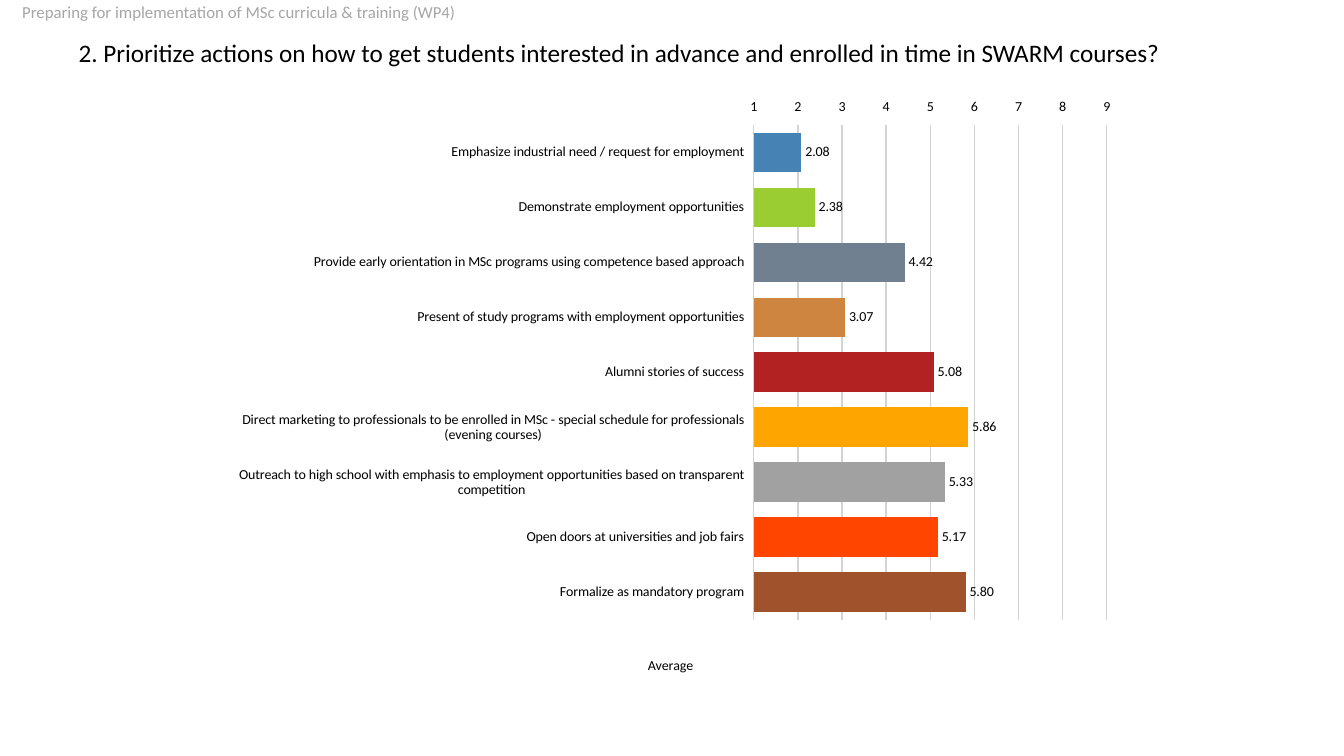
"""Build the slide that ranks actions for attracting students to the courses."""
from dataclasses import dataclass
from typing import Any

import lxml.etree
import pptx
import pptx.chart.data
import pptx.dml.color
import pptx.enum.chart
import pptx.enum.text
import pptx.oxml.ns
import pptx.util

Cm = pptx.util.Cm
Pt = pptx.util.Pt
qn = pptx.oxml.ns.qn


@dataclass(frozen=True)
class Theme:
    font: str = "Calibri"
    ink: str = "000000"
    muted: str = "A6A6A6"
    grid: str = "D3D3D3"
    question_size: int = 18
    section_size: int = 12
    chart_size: int = 10


@dataclass(frozen=True)
class Heading:
    text: str
    left: float
    top: float
    width: float
    height: float
    size: int
    colour: str
    inset: float


@dataclass(frozen=True)
class Action:
    label: str
    average: float
    colour: str


THEME = Theme()

HEADINGS = (
    Heading(
        "2. Prioritize actions on how to get students interested in advance and enrolled in time in SWARM courses?",
        1.73, 0.61, 30.48, 1.52, THEME.question_size, THEME.ink, 0.25,
    ),
    Heading(
        "Preparing for implementation of MSc curricula & training (WP4)",
        0, 0, 33.87, 0.64, THEME.section_size, THEME.muted, 0.56,
    ),
)

ACTIONS = (
    Action("Emphasize industrial need / request for employment", 2.08, "4682B4"),
    Action("Demonstrate employment opportunities", 2.38, "9ACD32"),
    Action("Provide early orientation in MSc programs using competence based approach", 4.42, "708090"),
    Action("Present of study programs with employment opportunities", 3.07, "CD853F"),
    Action("Alumni stories of success", 5.08, "B22222"),
    Action(
        "Direct marketing to professionals to be enrolled in MSc - special schedule for professionals (evening courses)",
        5.86, "FFA500",
    ),
    Action(
        "Outreach to high school with emphasis to employment opportunities based on transparent competition",
        5.33, "A1A1A1",
    ),
    Action("Open doors at universities and job fairs", 5.17, "FF4500"),
    Action("Formalize as mandatory program", 5.80, "A0522D"),
)


def style_font(font: Any, size: int, colour: str) -> None:
    """Apply the theme font with a size and a colour."""
    font.name = THEME.font
    font.size = Pt(size)
    font.bold = False
    font.color.rgb = pptx.dml.color.RGBColor.from_string(colour)


def add_heading(slide: Any, heading: Heading) -> None:
    """Add one line of heading text."""
    box = slide.shapes.add_textbox(
        Cm(heading.left), Cm(heading.top), Cm(heading.width), Cm(heading.height)
    )
    frame = box.text_frame
    frame.word_wrap = True
    frame.vertical_anchor = pptx.enum.text.MSO_ANCHOR.MIDDLE
    frame.margin_left = Cm(heading.inset)
    paragraph = frame.paragraphs[0]
    paragraph.line_spacing = 0.9
    run = paragraph.add_run()
    run.text = heading.text
    style_font(run.font, heading.size, heading.colour)


def set_layout(parent: Any, index: int, **settings: Any) -> None:
    """Give a chart part a manual layout in fractions of the chart."""
    for automatic in parent.findall(qn("c:layout")):
        parent.remove(automatic)
    layout = lxml.etree.Element(qn("c:layout"))
    manual = lxml.etree.SubElement(layout, qn("c:manualLayout"))
    for tag, value in settings.items():
        lxml.etree.SubElement(manual, qn(f"c:{tag}")).set("val", str(value))
    parent.insert(index, layout)


def style_axes(chart: Any) -> None:
    """Set the order of the actions and the scale of the averages."""
    actions_axis, average_axis = chart.category_axis, chart.value_axis
    for axis in (actions_axis, average_axis):
        axis.format.line.fill.background()
        style_font(axis.tick_labels.font, THEME.chart_size, THEME.ink)
    actions_axis.reverse_order = True
    actions_axis.crosses = pptx.enum.chart.XL_AXIS_CROSSES.MAXIMUM
    average_axis.minimum_scale = 1
    average_axis.maximum_scale = 9
    average_axis.major_unit = 1
    average_axis.tick_labels.number_format = "General"
    average_axis.tick_labels.number_format_is_linked = False
    gridline = average_axis.major_gridlines.format.line
    gridline.width = Pt(1)
    gridline.color.rgb = pptx.dml.color.RGBColor.from_string(THEME.grid)
    average_title = average_axis.axis_title
    run = average_title.text_frame.paragraphs[0].add_run()
    run.text = "Average"
    style_font(run.font, THEME.chart_size, THEME.ink)
    set_layout(average_title.element, 1, xMode="edge", yMode="edge", x=0.47, y=0.93)


def add_ranking(slide: Any, actions: tuple[Action, ...]) -> None:
    """Add the bar chart with one coloured bar per action."""
    ranking = pptx.chart.data.CategoryChartData(number_format="0.00")
    ranking.categories = [action.label for action in actions]
    ranking.add_series("Series 1", [action.average for action in actions])
    chart = slide.shapes.add_chart(
        pptx.enum.chart.XL_CHART_TYPE.BAR_CLUSTERED,
        Cm(5.54), Cm(2.51), Cm(22.81), Cm(15.01), ranking,
    ).chart
    chart.has_title = False
    chart.has_legend = False
    style_font(chart.font, THEME.question_size, THEME.ink)
    style_axes(chart)
    set_layout(
        chart.element.find(".//" + qn("c:plotArea")), 0,
        layoutTarget="inner", xMode="edge", yMode="edge", x=0.59, y=0.02, w=0.39, h=0.85,
    )
    plot = chart.plots[0]
    plot.gap_width = 40
    plot.vary_by_categories = False
    averages = plot.series[0]
    for index, action in enumerate(actions):
        fill = averages.points[index].format.fill
        fill.solid()
        fill.fore_color.rgb = pptx.dml.color.RGBColor.from_string(action.colour)
    labels = averages.data_labels
    labels.show_value = True
    labels.number_format = "0.00"
    labels.number_format_is_linked = False
    labels.position = pptx.enum.chart.XL_LABEL_POSITION.OUTSIDE_END
    style_font(labels.font, THEME.chart_size, THEME.ink)


def main() -> None:
    """Build and save the presentation."""
    presentation = pptx.Presentation()
    presentation.slide_width = Cm(33.87)
    presentation.slide_height = Cm(19.05)
    slide = presentation.slides.add_slide(presentation.slide_layouts[6])
    for heading in HEADINGS:
        add_heading(slide, heading)
    add_ranking(slide, ACTIONS)
    presentation.save("out.pptx")


if __name__ == "__main__":
    main()
